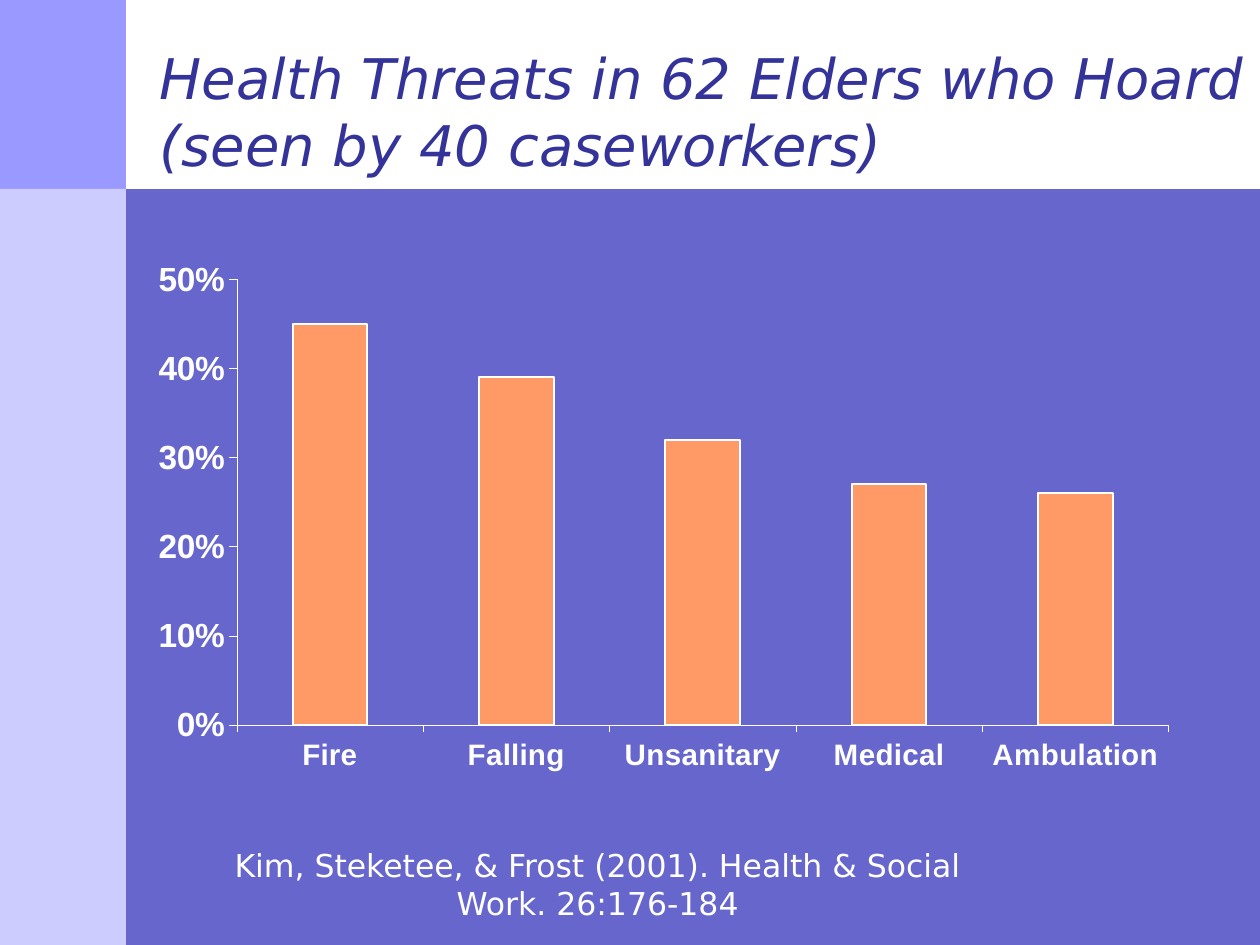
"""Build a slide charting health threats among elders who hoard."""
from dataclasses import dataclass

from lxml.etree import SubElement
from pptx import Presentation
from pptx.chart.data import CategoryChartData
from pptx.dml.color import RGBColor
from pptx.enum.chart import XL_CHART_TYPE, XL_TICK_MARK
from pptx.enum.shapes import MSO_SHAPE
from pptx.enum.text import MSO_ANCHOR, PP_ALIGN
from pptx.oxml.ns import qn
from pptx.util import Cm, Pt

WHITE = RGBColor(0xFF, 0xFF, 0xFF)
INDIGO = RGBColor(0x66, 0x66, 0xCC)
PERIWINKLE = RGBColor(0x99, 0x99, 0xFF)
LAVENDER = RGBColor(0xCC, 0xCC, 0xFF)
NAVY = RGBColor(0x33, 0x33, 0x99)
ORANGE = RGBColor(0xFF, 0x99, 0x66)

THREATS = {"Fire": 0.45, "Falling": 0.39, "Unsanitary": 0.32,
           "Medical": 0.27, "Ambulation": 0.26}
PLOT = {"x": 0.101, "y": 0.072, "w": 0.889, "h": 0.781}


@dataclass(frozen=True)
class Box:
    """Position and size in centimetres."""
    left: float
    top: float
    width: float
    height: float

    def lengths(self) -> tuple:
        """Return the four lengths for a shape call."""
        return Cm(self.left), Cm(self.top), Cm(self.width), Cm(self.height)


@dataclass(frozen=True)
class Panel:
    """A plain coloured background block."""
    box: Box
    color: RGBColor


@dataclass(frozen=True)
class Label:
    """A text box holding one paragraph."""
    box: Box
    text: str
    color: RGBColor
    align: PP_ALIGN
    anchor: MSO_ANCHOR
    font: dict


PANELS = (
    Panel(Box(0, 0, 25.4, 3.81), WHITE),
    Panel(Box(0, 0, 2.54, 3.81), PERIWINKLE),
    Panel(Box(0, 3.81, 2.54, 15.24), LAVENDER),
)
LABELS = (
    Label(Box(2.97, 0.64, 22.43, 3.17),
          "Health Threats in 62 Elders who Hoard (seen by 40 caseworkers)",
          NAVY, PP_ALIGN.LEFT, MSO_ANCHOR.MIDDLE,
          {"name": "DejaVu Sans", "size": Pt(32), "italic": True}),
    Label(Box(4.01, 16.94, 16.08, 1.27),
          "Kim, Steketee, & Frost (2001). Health & Social Work. 26:176-184",
          WHITE, PP_ALIGN.CENTER, MSO_ANCHOR.TOP,
          {"name": "DejaVu Sans", "size": Pt(18)}),
)
CHART_BOX = Box(2.64, 4.8, 21.13, 11.51)


def apply(target, values: dict) -> None:
    """Set each named attribute on the target."""
    for name, value in values.items():
        setattr(target, name, value)


def style_font(font, color: RGBColor, values: dict) -> None:
    """Give a font its colour and format values."""
    apply(font, values)
    font.color.rgb = color


def add_panel(s, panel: Panel) -> None:
    """Draw a borderless filled rectangle."""
    sp = s.shapes.add_shape(MSO_SHAPE.RECTANGLE, *panel.box.lengths())
    sp.shadow.inherit = False
    sp.fill.solid()
    sp.fill.fore_color.rgb = panel.color
    sp.line.fill.background()


def add_label(s, label: Label) -> None:
    """Draw a wrapped text box."""
    tf = s.shapes.add_textbox(*label.box.lengths()).text_frame
    apply(tf, {"word_wrap": True, "vertical_anchor": label.anchor})
    p = tf.paragraphs[0]
    p.alignment = label.align
    r = p.add_run()
    r.text = label.text
    style_font(r.font, label.color, label.font)


def style_axis(axis, size: float) -> None:
    """Give an axis its ticks, thin white line and bold labels."""
    apply(axis, {"has_major_gridlines": False,
                 "major_tick_mark": XL_TICK_MARK.OUTSIDE,
                 "minor_tick_mark": XL_TICK_MARK.NONE})
    axis.format.line.color.rgb = WHITE
    axis.format.line.width = Pt(0.25)
    style_font(axis.tick_labels.font, WHITE,
               {"name": "Arial", "size": Pt(size), "bold": True})


def place_plot(chart) -> None:
    """Fix the inner plot area as fractions of the chart."""
    area = chart.plots[0]._element.getparent()
    for old in area.findall(qn("c:layout")):
        area.remove(old)
    layout = SubElement(area, qn("c:layout"))
    area.insert(0, layout)
    manual = SubElement(layout, qn("c:manualLayout"))
    settings = {"layoutTarget": "inner", "xMode": "edge", "yMode": "edge", **PLOT}
    for tag, value in settings.items():
        SubElement(manual, qn(f"c:{tag}")).set("val", str(value))


def add_threat_chart(s) -> None:
    """Draw the column chart of threat shares."""
    data = CategoryChartData(number_format="0%")
    data.categories = list(THREATS)
    data.add_series("Series 1", list(THREATS.values()))
    chart = s.shapes.add_chart(XL_CHART_TYPE.COLUMN_CLUSTERED,
                               *CHART_BOX.lengths(), data).chart
    apply(chart, {"has_legend": False, "has_title": False})
    style_font(chart.font, WHITE, {"name": "Arial", "size": Pt(19.1), "bold": True})
    style_axis(chart.category_axis, 16.9)
    style_axis(chart.value_axis, 19.1)
    apply(chart.value_axis, {"minimum_scale": 0, "maximum_scale": 0.5,
                             "major_unit": 0.1})
    apply(chart.value_axis.tick_labels, {"number_format": "0%",
                                         "number_format_is_linked": False})
    plot = chart.plots[0]
    apply(plot, {"gap_width": 150, "vary_by_categories": False})
    bars = plot.series[0].format
    bars.fill.solid()
    bars.fill.fore_color.rgb = ORANGE
    bars.line.color.rgb = WHITE
    bars.line.width = Pt(1.06)
    place_plot(chart)


def main() -> None:
    """Assemble and save the slide."""
    prs = Presentation()
    apply(prs, {"slide_width": Cm(25.4), "slide_height": Cm(19.05)})
    s = prs.slides.add_slide(prs.slide_layouts[6])
    s.background.fill.solid()
    s.background.fill.fore_color.rgb = INDIGO
    for panel in PANELS:
        add_panel(s, panel)
    add_threat_chart(s)
    for label in LABELS:
        add_label(s, label)
    prs.save("out.pptx")


if __name__ == "__main__":
    main()
